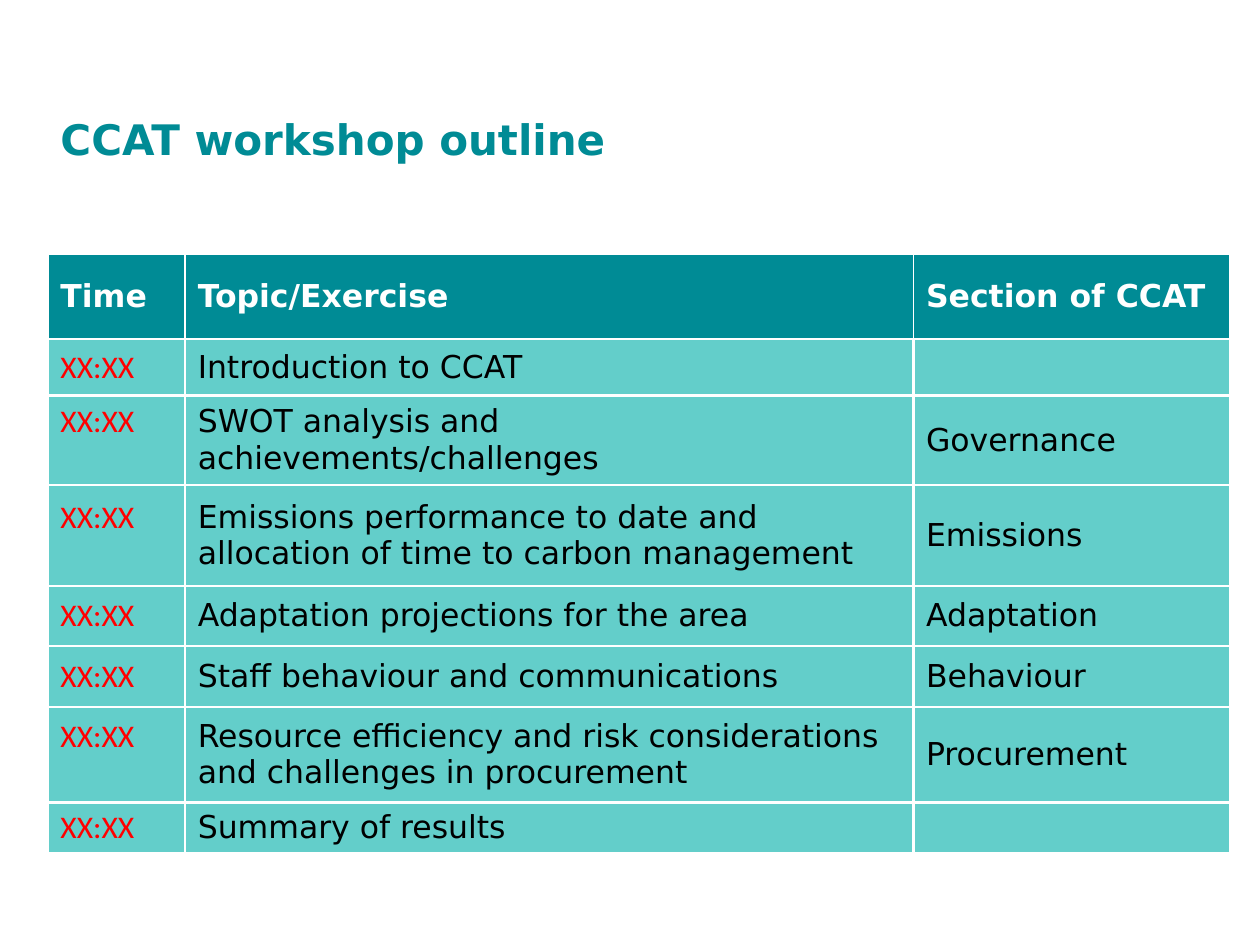
import dataclasses

import pptx
import pptx.dml.color
import pptx.enum.text
import pptx.oxml
import pptx.oxml.ns
import pptx.util

# The page is a grid of 1000 columns by 750 rows of square units.
PAGE_WIDTH = pptx.util.Inches(10)
UNIT = PAGE_WIDTH // 1000
PAGE_HEIGHT = 750 * UNIT

TEAL, PALE_TEAL = "008B95", "63CECA"
WHITE, BLACK, RED = "FFFFFF", "000000", "FF0000"
BODY_FONT, TIME_FONT = "DejaVu Sans", "Calibri"
LEFT = 38
COLUMN_WIDTHS = (109, 578, 251)
SECOND_LINE = 29


@dataclasses.dataclass(frozen=True)
class Session:
    height: int
    topic: str
    section: str = ""
    two_lines: bool = False


HEADER_HEIGHT = 67
HEADINGS = ("Time", "Topic/Exercise", "Section of CCAT")
TIME = "XX:XX"
SESSIONS = (
    Session(45, "Introduction to CCAT"),
    Session(71, "SWOT analysis and achievements/challenges", "Governance", True),
    Session(80, "Emissions performance to date and allocation of time to carbon management",
            "Emissions", True),
    Session(48, "Adaptation projections for the area", "Adaptation"),
    Session(48, "Staff behaviour and communications", "Behaviour"),
    Session(76, "Resource efficiency and risk considerations and challenges in procurement",
            "Procurement", True),
    Session(40, "Summary of results"),
)


def color(value: str) -> pptx.dml.color.RGBColor:
    return pptx.dml.color.RGBColor.from_string(value)


def write(frame, text: str, *, size: float = 18, font: str = BODY_FONT,
          ink: str = BLACK, bold: bool = False) -> None:
    para = frame.paragraphs[0]
    para.alignment = pptx.enum.text.PP_ALIGN.LEFT
    span = para.add_run()
    span.text = text
    span.font.size = pptx.util.Pt(size)
    span.font.name = font
    span.font.bold = bold
    span.font.color.rgb = color(ink)


def set_borders(cell, widths: dict[str, float]) -> None:
    """Give the cell white borders; they must precede the fill in the XML."""
    properties = cell._tc.get_or_add_tcPr()
    for index, (side, width) in enumerate(widths.items()):
        line = pptx.oxml.parse_xml(
            f'<a:{side} {pptx.oxml.ns.nsdecls("a")} w="{pptx.util.Pt(width)}">'
            f'<a:solidFill><a:srgbClr val="{WHITE}"/></a:solidFill></a:{side}>')
        properties.insert(index, line)


def fill_cell(cell, text: str, fill: str, edge: float, **text_format) -> None:
    cell.fill.solid()
    cell.fill.fore_color.rgb = color(fill)
    cell.vertical_anchor = pptx.enum.text.MSO_ANCHOR.MIDDLE
    set_borders(cell, {"lnL": edge, "lnR": edge, "lnT": edge, "lnB": 1.5})
    if text:
        write(cell.text_frame, text, **text_format)


def add_title(page) -> None:
    title = page.shapes.title
    title.left, title.top = LEFT * UNIT, 83 * UNIT
    title.width, title.height = 733 * UNIT, 64 * UNIT
    frame = title.text_frame
    frame.word_wrap = True
    frame.vertical_anchor = pptx.enum.text.MSO_ANCHOR.TOP
    frame.margin_top = 7 * UNIT
    write(frame, "CCAT workshop outline", size=24, ink=TEAL, bold=True)


def add_schedule(page) -> None:
    heights = [HEADER_HEIGHT] + [session.height for session in SESSIONS]
    table = page.shapes.add_table(
        len(heights), len(COLUMN_WIDTHS), LEFT * UNIT, 202 * UNIT,
        sum(COLUMN_WIDTHS) * UNIT, sum(heights) * UNIT).table
    for column, width in zip(table.columns, COLUMN_WIDTHS):
        column.width = width * UNIT
    for row, height in zip(table.rows, heights):
        row.height = height * UNIT
    for index, heading in enumerate(HEADINGS):
        fill_cell(table.cell(0, index), heading, TEAL, 1, ink=WHITE, bold=True)
    for index, session in enumerate(SESSIONS, start=1):
        time, topic, section = (table.cell(index, column) for column in range(3))
        fill_cell(time, TIME, PALE_TEAL, 1.5, font=TIME_FONT, ink=RED)
        if session.two_lines:
            # Lift the time to the first line of its topic.
            time.margin_bottom = (5 + SECOND_LINE) * UNIT
        fill_cell(topic, session.topic, PALE_TEAL, 1.5)
        fill_cell(section, session.section, PALE_TEAL, 1.5)


def main() -> None:
    deck = pptx.Presentation()
    deck.slide_width, deck.slide_height = PAGE_WIDTH, PAGE_HEIGHT
    page = deck.slides.add_slide(deck.slide_layouts.get_by_name("Title Only"))
    add_title(page)
    add_schedule(page)
    deck.save("out.pptx")


if __name__ == "__main__":
    main()
